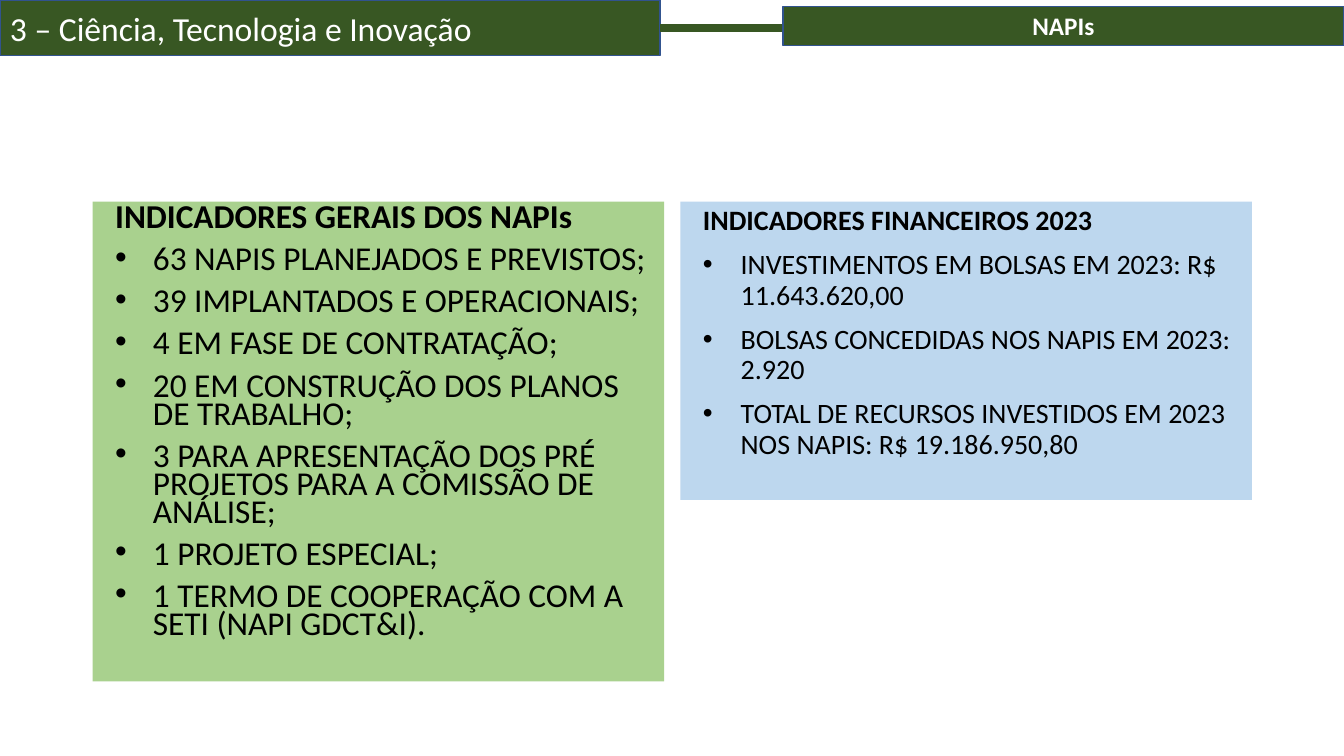
import pptx
import pptx.util
import pptx.dml.color
import pptx.enum.shapes
import pptx.enum.text
import lxml.etree
from pptx.oxml.ns import qn

Pt = pptx.util.Pt
ALIGN = pptx.enum.text.PP_ALIGN
ANCHOR = pptx.enum.text.MSO_ANCHOR

COLORS = {
    "dark": "385723",
    "edge": "31538F",
    "green": "A9D18E",
    "blue": "BDD7EE",
    "white": "FFFFFF",
    "black": "000000",
}


def color(name):
    return pptx.dml.color.RGBColor.from_string(COLORS[name])


def add_box(left, top, width, height, fill, anchor):
    box = slide.shapes.add_shape(
        pptx.enum.shapes.MSO_SHAPE.RECTANGLE,
        Pt(left), Pt(top), Pt(width), Pt(height))
    box.shadow.inherit = False
    box.fill.solid()
    box.fill.fore_color.rgb = color(fill)
    box.text_frame.word_wrap = True
    box.text_frame.vertical_anchor = anchor
    return box


deck = pptx.Presentation()
deck.slide_width, deck.slide_height = Pt(960), Pt(540)
slide = deck.slides.add_slide(deck.slide_layouts[6])

# Indicator panels: left, height, fill, text size, line spacing, lines
panels = [
    (66.2, 342.7, "green", 23.8, 0.7, [
        "INDICADORES GERAIS DOS NAPIs",
        "63 NAPIS PLANEJADOS E PREVISTOS;",
        "39 IMPLANTADOS E OPERACIONAIS;",
        "4 EM FASE DE CONTRATAÇÃO;",
        "20 EM CONSTRUÇÃO DOS PLANOS DE TRABALHO;",
        "3 PARA APRESENTAÇÃO DOS PRÉ PROJETOS PARA A COMISSÃO DE ANÁLISE;",
        "1 PROJETO ESPECIAL;",
        "1 TERMO DE COOPERAÇÃO COM A SETI (NAPI GDCT&I).",
    ]),
    (486, 213.1, "blue", 20, 0.9, [
        "INDICADORES FINANCEIROS 2023",
        "INVESTIMENTOS EM BOLSAS EM 2023: R$ 11.643.620,00",
        "BOLSAS CONCEDIDAS NOS NAPIS EM 2023: 2.920",
        "TOTAL DE RECURSOS INVESTIDOS EM 2023 NOS NAPIS: R$ 19.186.950,80",
    ]),
]
for left, height, fill, size, pitch, lines in panels:
    panel = add_box(left, 144, 408.2, height, fill, ANCHOR.TOP)
    panel.line.fill.background()
    frame = panel.text_frame
    for i, line in enumerate(lines):
        para = frame.paragraphs[0] if i == 0 else frame.add_paragraph()
        para.text = line
        para.alignment = ALIGN.LEFT
        para.line_spacing = pitch
        para.space_before = Pt(10)
        para.font.name = "Calibri"
        para.font.size = Pt(size)
        para.font.bold = i == 0
        para.font.color.rgb = color("black")
        # The heading is only indented; the other lines hang on a bullet
        props = para._p.get_or_add_pPr()
        props.set("marL", str(Pt(9 if i == 0 else 36)))
        props.set("indent", str(Pt(0 if i == 0 else -27)))
        if i > 0:
            font = lxml.etree.SubElement(props, qn("a:buFont"))
            font.set("typeface", "Arial")
            mark = lxml.etree.SubElement(props, qn("a:buChar"))
            mark.set("char", "•")

# Header: title bar, rule and topic bar, from back to front
rule_y = 20.2
bars = [
    (0, 0, 471.6, 39.6, "3 – Ciência, Tecnologia e Inovação", 24, False, ALIGN.LEFT),
    (559.2, 4.6, 400.8, 27.8, "NAPIs", 18, True, ALIGN.CENTER),
]
for left, top, width, height, text, size, bold, align in bars:
    if left > 0:
        rule = slide.shapes.add_connector(
            pptx.enum.shapes.MSO_CONNECTOR.STRAIGHT,
            Pt(471.6), Pt(rule_y), Pt(960), Pt(rule_y))
        rule.line.color.rgb = color("dark")
        rule.line.width = Pt(6)
        lxml.etree.SubElement(rule._element.spPr, qn("a:effectLst"))
    bar = add_box(left, top, width, height, "dark", ANCHOR.MIDDLE)
    bar.line.color.rgb = color("edge")
    bar.line.width = Pt(1)
    para = bar.text_frame.paragraphs[0]
    para.text = text
    para.alignment = align
    para.font.name = "Calibri"
    para.font.size = Pt(size)
    para.font.bold = bold
    para.font.color.rgb = color("white")

deck.save("out.pptx")
